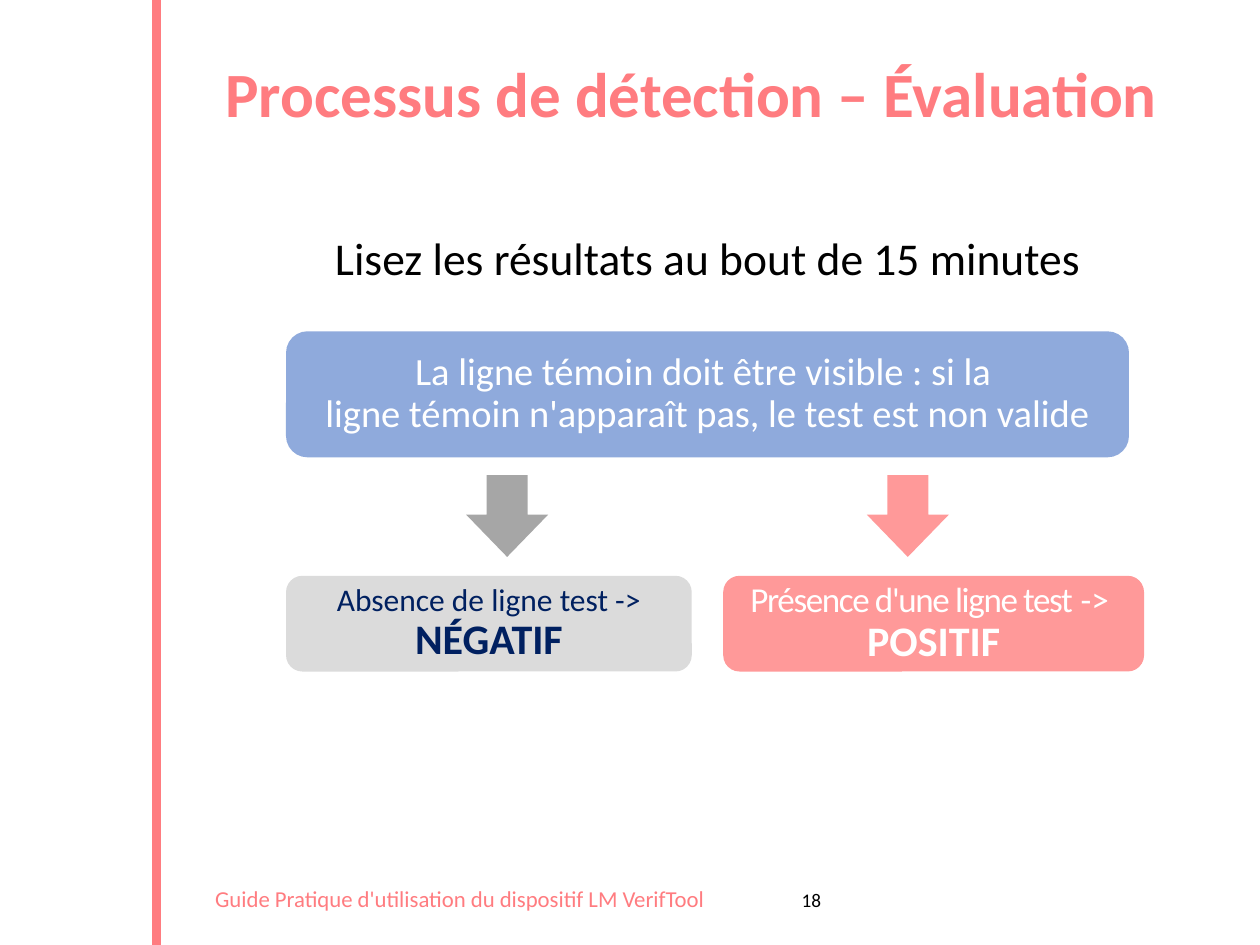
from lxml.etree import SubElement
from pptx import Presentation
from pptx.dml.color import RGBColor
from pptx.enum.shapes import MSO_CONNECTOR, MSO_SHAPE
from pptx.enum.text import MSO_ANCHOR, PP_ALIGN
from pptx.oxml.ns import qn
from pptx.util import Inches, Pt

CORAL = RGBColor(0xFF, 0x7C, 0x80)
PINK = RGBColor(0xFF, 0x99, 0x99)
BLUE = RGBColor(0x8F, 0xAA, 0xDC)
LIGHT_GREY = RGBColor(0xDB, 0xDB, 0xDB)
GREY = RGBColor(0xA6, 0xA6, 0xA6)
NAVY = RGBColor(0x00, 0x20, 0x60)
WHITE = RGBColor(0xFF, 0xFF, 0xFF)
BLACK = RGBColor(0x00, 0x00, 0x00)

FONT = "Calibri"
COLS, ROWS = 100, 75
SLIDE_W, SLIDE_H = Inches(10), Inches(7.5)


def col(n):
    return int(SLIDE_W * n / COLS)


def row(n):
    return int(SLIDE_H * n / ROWS)


def place(x, y, w, h):
    return col(x), row(y), col(w), row(h)


def set_font(font, size, color, bold=False):
    font.name = FONT
    font.size = Pt(size)
    font.color.rgb = color
    font.bold = bold


def add_text(s, box, text, size, color, bold=False, align=PP_ALIGN.LEFT, spacing=1.0):
    tf = s.shapes.add_textbox(*place(*box)).text_frame
    tf.word_wrap = True
    p = tf.paragraphs[0]
    p.text = text
    p.alignment = align
    p.line_spacing = spacing
    set_font(p.font, size, color, bold)


def add_filled(s, kind, box, fill, adjustments):
    sp = s.shapes.add_shape(kind, *place(*box))
    sp.shadow.inherit = False
    sp.fill.solid()
    sp.fill.fore_color.rgb = fill
    sp.line.fill.background()
    for i, value in enumerate(adjustments):
        sp.adjustments[i] = value
    return sp


def add_card(s, box, fill, color, size, lines):
    sp = add_filled(s, MSO_SHAPE.ROUNDED_RECTANGLE, box, fill, [0.17])
    tf = sp.text_frame
    tf.word_wrap = True
    tf.vertical_anchor = MSO_ANCHOR.MIDDLE
    tf.margin_left = tf.margin_right = Inches(0.15)
    tf.margin_top = tf.margin_bottom = Inches(0.01)
    p = tf.paragraphs[0]
    p.alignment = PP_ALIGN.CENTER
    p.line_spacing = 0.9
    set_font(p.font, size, color)
    for i, line in enumerate(lines):
        if i:
            p.add_line_break()
        for text, style in line:
            r = p.add_run()
            r.text = text
            if "size" in style:
                r.font.size = Pt(style["size"])
                r.font.bold = True
            if "tracking" in style:
                r.font._element.set("spc", str(style["tracking"]))


def add_arrow(s, center, fill):
    side = 6.5
    box = (center - side / 2, 37.7, side, side)
    add_filled(s, MSO_SHAPE.DOWN_ARROW, box, fill, [0.5, 0.515])


def add_side_line(s, x):
    line = s.shapes.add_connector(MSO_CONNECTOR.STRAIGHT, col(x), row(ROWS), col(x), 0)
    line.line.color.rgb = CORAL
    line.line.width = Pt(5)
    SubElement(line._element.spPr, qn("a:effectLst"))


def main():
    prs = Presentation()
    prs.slide_width, prs.slide_height = SLIDE_W, SLIDE_H
    s = prs.slides.add_slide(prs.slide_layouts[6])

    add_side_line(s, 12.4)
    add_text(s, (16.9, 4.5, 76.3, 9.3), "Processus de détection – Évaluation",
             36, CORAL, bold=True, spacing=0.9)
    add_text(s, (25.6, 17.8, 61.2, 5.4), "Lisez les résultats au bout de 15 minutes",
             26, BLACK)

    verdict = {"size": 24}
    add_card(s, (22.7, 26.3, 66.9, 10), BLUE, WHITE, 22, [
        [("La ligne témoin doit être visible\u00a0: si la ", {})],
        [("ligne témoin n'apparaît pas, le test est non valide", {})],
    ])
    add_card(s, (22.7, 45.7, 32.2, 7.6), LIGHT_GREY, NAVY, 18, [
        [("Absence de ligne test -> ", {}), ("NÉGATIF", verdict)],
    ])
    add_card(s, (57.4, 45.7, 33.4, 7.6), PINK, WHITE, 20, [
        [("Présence d'une ligne test", {"tracking": -80}), (" -> ", {})],
        [("POSITIF", verdict)],
    ])
    for center, fill in ((40.25, GREY), (72.05, PINK)):
        add_arrow(s, center, fill)

    add_text(s, (16.1, 69.7, 50.6, 5.4),
             "Guide Pratique d'utilisation du dispositif LM VerifTool", 13, CORAL)
    add_text(s, (62.2, 70, 4.4, 2.9), "18", 11, BLACK, align=PP_ALIGN.CENTER)

    prs.save("out.pptx")


if __name__ == "__main__":
    main()
